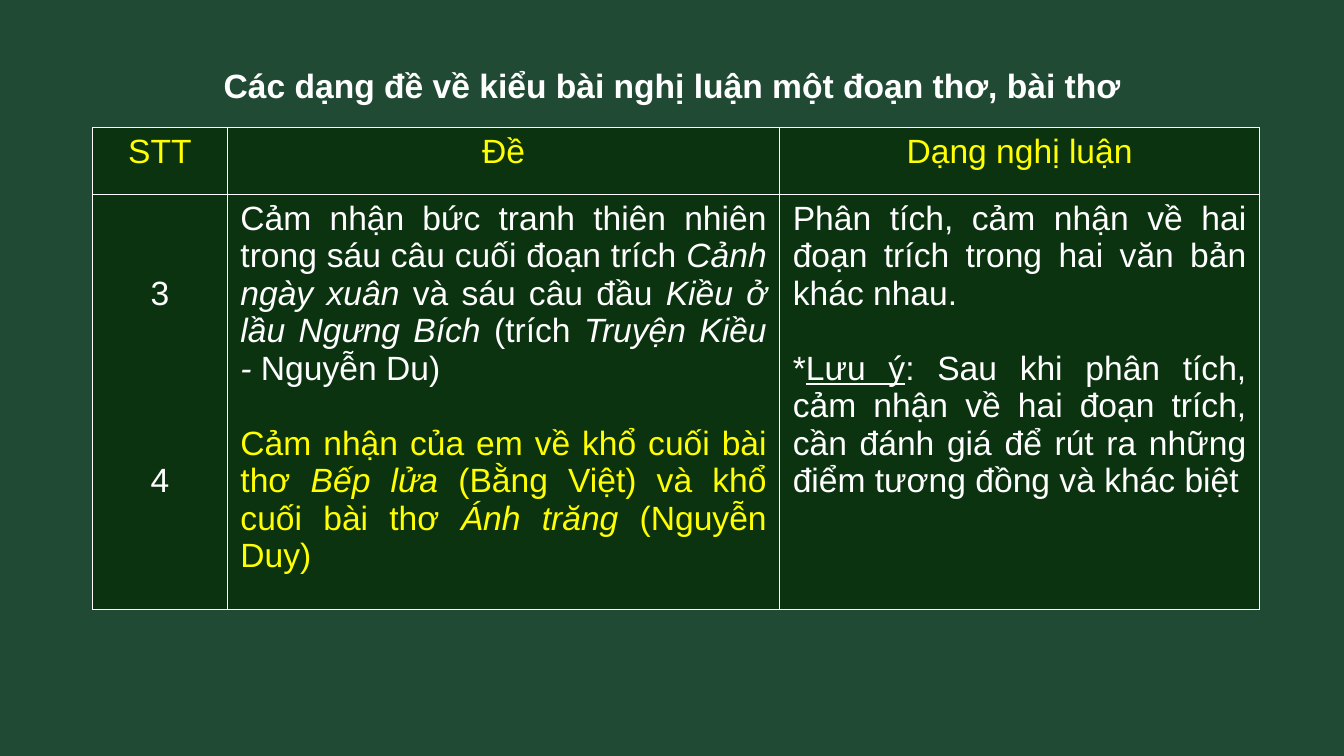
from dataclasses import dataclass

from lxml import etree
from pptx import Presentation
from pptx.dml.color import RGBColor
from pptx.enum.text import PP_ALIGN
from pptx.oxml.ns import qn
from pptx.util import Cm, Pt

CENTER, JUSTIFY = PP_ALIGN.CENTER, PP_ALIGN.JUSTIFY


@dataclass(frozen=True)
class Theme:
    background: str = "214A34"
    cell: str = "0B3310"
    white: str = "FFFFFF"
    yellow: str = "FFFF00"
    font: str = "Arial"
    size: float = 24
    line: float = 26.8
    border: float = 1


theme = Theme()


def write(para, align, color, spans):
    """Fill a paragraph with (text, style) spans; style is "", "bold", "italic" or "underline"."""
    para.alignment = align
    for text, style in spans:
        span = para.add_run()
        span.text = text
        span.font.name = theme.font
        span.font.size = Pt(theme.size)
        span.font.color.rgb = RGBColor.from_string(color)
        if style:
            setattr(span.font, style, True)


def add_borders(cell):
    properties = cell._tc.get_or_add_tcPr()
    for side in ("lnL", "lnR", "lnT", "lnB"):
        line = etree.SubElement(properties, qn(f"a:{side}"), w=str(Pt(theme.border)))
        fill = etree.SubElement(line, qn("a:solidFill"))
        etree.SubElement(fill, qn("a:srgbClr"), val=theme.white)


deck = Presentation()
deck.slide_width, deck.slide_height = Cm(33.87), Cm(19.05)
page = deck.slides.add_slide(deck.slide_layouts[6])
page.background.fill.solid()
page.background.fill.fore_color.rgb = RGBColor.from_string(theme.background)

# Title
title = page.shapes.add_textbox(Cm(1.3), Cm(1.52), Cm(31.52), Cm(1.28)).text_frame
title.word_wrap = True
write(title.paragraphs[0], CENTER, theme.white,
      [("Các dạng đề về kiểu bài nghị luận một đoạn thơ, bài thơ ", "bold")])

# Each cell: alignment, blank lines between paragraphs, paragraphs as (colour, spans)
headers = [(CENTER, 0, [(theme.yellow, [(name, "")])])
           for name in ("STT", "Đề", "Dạng nghị luận")]
numbers = (CENTER, 4, [(theme.white, [("3", "")]), (theme.white, [("4", "")])])
topics = (JUSTIFY, 1, [
    (theme.white, [
        ("Cảm nhận bức tranh thiên nhiên trong sáu câu cuối đoạn trích ", ""),
        ("Cảnh ngày xuân ", "italic"),
        ("và sáu câu đầu ", ""),
        ("Kiều ở lầu Ngưng Bích", "italic"),
        (" (trích ", ""),
        ("Truyện Kiều - ", "italic"),
        ("Nguyễn Du)", ""),
    ]),
    (theme.yellow, [
        ("Cảm nhận của em về khổ cuối bài thơ ", ""),
        ("Bếp lửa ", "italic"),
        ("(Bằng Việt) và khổ cuối bài thơ ", ""),
        ("Ánh trăng ", "italic"),
        ("(Nguyễn Duy)", ""),
    ]),
])
kinds = (JUSTIFY, 1, [
    (theme.white, [
        ("Phân tích, cảm nhận về hai đoạn trích trong hai văn bản khác nhau.", ""),
    ]),
    (theme.white, [
        ("*", ""),
        ("Lưu ý", "underline"),
        (": Sau khi phân tích, cảm nhận về hai đoạn trích, cần đánh giá để rút ra "
         "những điểm tương đồng và khác biệt", ""),
    ]),
])
rows = [headers, [numbers, topics, kinds]]

# Table
widths = [Cm(3.4), Cm(13.92), Cm(12.09)]
heights = [Cm(1.69), Cm(10.44)]
table = page.shapes.add_table(len(rows), len(widths), Cm(2.33), Cm(3.22),
                              sum(widths), sum(heights)).table
table.first_row = table.horz_banding = False
for column, width in zip(table.columns, widths):
    column.width = width
for row, height in zip(table.rows, heights):
    row.height = height

for r, row in enumerate(rows):
    for c, (align, blank_lines, paragraphs) in enumerate(row):
        cell = table.cell(r, c)
        add_borders(cell)
        cell.fill.solid()
        cell.fill.fore_color.rgb = RGBColor.from_string(theme.cell)
        cell.margin_left = cell.margin_right = Cm(0.33)
        cell.margin_top = cell.margin_bottom = Cm(0.13)
        for i, (color, spans) in enumerate(paragraphs):
            frame = cell.text_frame
            para = frame.add_paragraph() if i else frame.paragraphs[0]
            if i:
                para.space_before = Pt(blank_lines * theme.line)
            write(para, align, color, spans)

# The first number stands two lines below the top of its cell
table.cell(1, 0).margin_top = Cm(0.13) + Pt(2 * theme.line)

deck.save("out.pptx")
